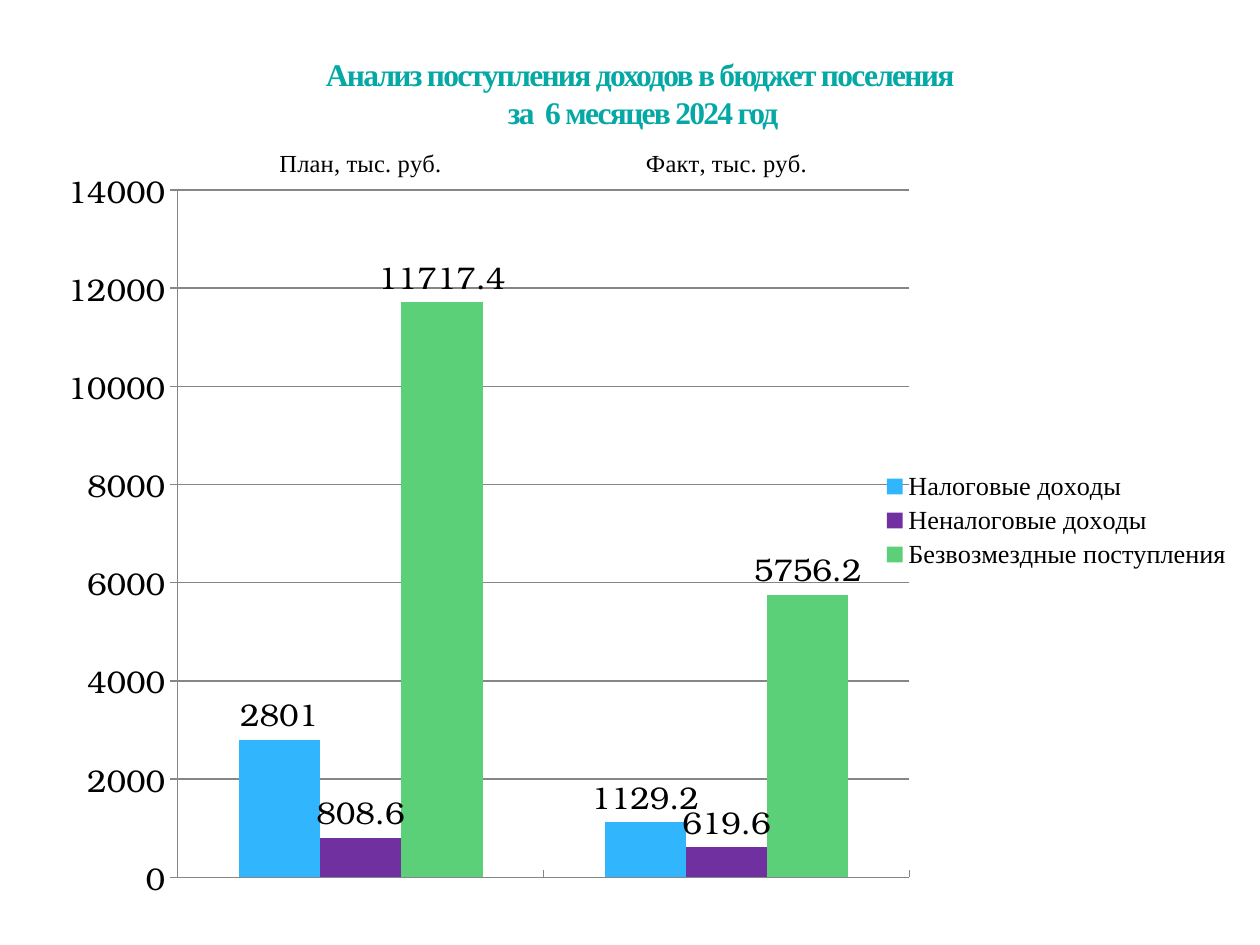
from lxml import etree
from pptx import Presentation
from pptx.chart.data import CategoryChartData
from pptx.dml.color import RGBColor
from pptx.enum.chart import (XL_CHART_TYPE as ChartType, XL_LABEL_POSITION as LabelPosition,
                             XL_LEGEND_POSITION as LegendPosition, XL_TICK_LABEL_POSITION as TickLabels,
                             XL_TICK_MARK as TickMark)
from pptx.enum.text import MSO_ANCHOR as Anchor, PP_ALIGN as Align
from pptx.oxml.ns import qn
from pptx.util import Inches, Pt

COLORS = {"title": "04A8A4", "text": "000000", "axis": "868686"}
SERIF = "Times New Roman"
DISPLAY = "TeX Gyre Bonum"
TITLE_LINES = ["Анализ поступления доходов в бюджет поселения", " за  6 месяцев 2024 год"]
CATEGORIES = ["План, тыс. руб.", "Факт, тыс. руб."]
INCOME = [
    ("Налоговые доходы", (2801, 1129.2), "31B6FD"),
    ("Неналоговые доходы", (808.6, 619.6), "7030A0"),
    ("Безвозмездные поступления", (11717.4, 5756.2), "5BD078"),
]


def style_font(font, name, size, color=COLORS["text"], bold=False):
    """Set typeface, size, colour and weight of a font."""
    font.name, font.size, font.bold = name, Pt(size), bold
    font.color.rgb = RGBColor.from_string(color)


def style_line(line):
    """Give an axis or grid line its grey stroke."""
    line.color.rgb = RGBColor.from_string(COLORS["axis"])
    line.width = Pt(0.75)


def set_plot_layout(chart, x, y, w, h):
    """Fix the inner plot area to fractions of the chart box."""
    plot_area = chart.plots[0]._element.getparent()
    for old in plot_area.findall(qn("c:layout")):
        plot_area.remove(old)
    layout = etree.Element(qn("c:layout"))
    manual = etree.SubElement(layout, qn("c:manualLayout"))
    settings = {"layoutTarget": "inner", "xMode": "edge", "yMode": "edge", "x": x, "y": y, "w": w, "h": h}
    for tag, value in settings.items():
        etree.SubElement(manual, qn(f"c:{tag}")).set("val", str(value))
    plot_area.insert(0, layout)


def add_title(slide, left, top, width, height):
    """Place the centred two-line title in its box."""
    frame = slide.shapes.add_textbox(left, top, width, height).text_frame
    frame.word_wrap = True
    frame.vertical_anchor = Anchor.TOP
    frame.margin_top = frame.margin_bottom = 0
    paragraph = frame.paragraphs[0]
    paragraph.text = "\v".join(TITLE_LINES)
    paragraph.alignment = Align.CENTER
    style_font(paragraph.font, SERIF, 18, COLORS["title"], bold=True)
    for run in paragraph.runs:
        run._r.get_or_add_rPr().set("spc", "-100")


def style_axes(chart):
    """Format both axes, with the categories above the plot."""
    category_axis, value_axis = chart.category_axis, chart.value_axis
    category_axis.major_tick_mark = TickMark.INSIDE
    category_axis.tick_label_position = TickLabels.HIGH
    style_font(category_axis.tick_labels.font, SERIF, 14)
    value_axis.minimum_scale, value_axis.maximum_scale, value_axis.major_unit = 0, 14000, 2000
    value_axis.major_tick_mark = TickMark.OUTSIDE
    style_font(value_axis.tick_labels.font, DISPLAY, 18)
    for line in (category_axis.format.line, value_axis.format.line, value_axis.major_gridlines.format.line):
        style_line(line)


def add_income_chart(slide, left, top, width, height):
    """Place the clustered column chart of planned and actual income."""
    data = CategoryChartData(number_format="General")
    data.categories = CATEGORIES
    for name, values, _ in INCOME:
        data.add_series(name, values)
    chart = slide.shapes.add_chart(ChartType.COLUMN_CLUSTERED, left, top, width, height, data).chart
    chart.has_title = False
    style_font(chart.font, DISPLAY, 18)
    plot = chart.plots[0]
    plot.gap_width, plot.overlap, plot.vary_by_categories = 150, 0, False
    for series, (_, _, color) in zip(plot.series, INCOME):
        series.format.fill.solid()
        series.format.fill.fore_color.rgb = RGBColor.from_string(color)
        series.data_labels.show_value = True
        series.data_labels.position = LabelPosition.OUTSIDE_END
        style_font(series.data_labels.font, DISPLAY, 18)
    style_axes(chart)
    chart.has_legend = True
    chart.legend.position = LegendPosition.RIGHT
    chart.legend.include_in_layout = False
    style_font(chart.legend.font, SERIF, 15)
    set_plot_layout(chart, 0.096, 0.06, 0.62, 0.915)


def main():
    """Build the income slide and save it."""
    presentation = Presentation()
    presentation.slide_width, presentation.slide_height = Inches(10), Inches(7.5)
    slide = presentation.slides.add_slide(presentation.slide_layouts[6])
    add_income_chart(slide, Inches(0.51), Inches(1.15), Inches(9.37), Inches(5.98))
    add_title(slide, Inches(1.14), Inches(0.44), Inches(7.88), Inches(0.87))
    presentation.save("out.pptx")


if __name__ == "__main__":
    main()
